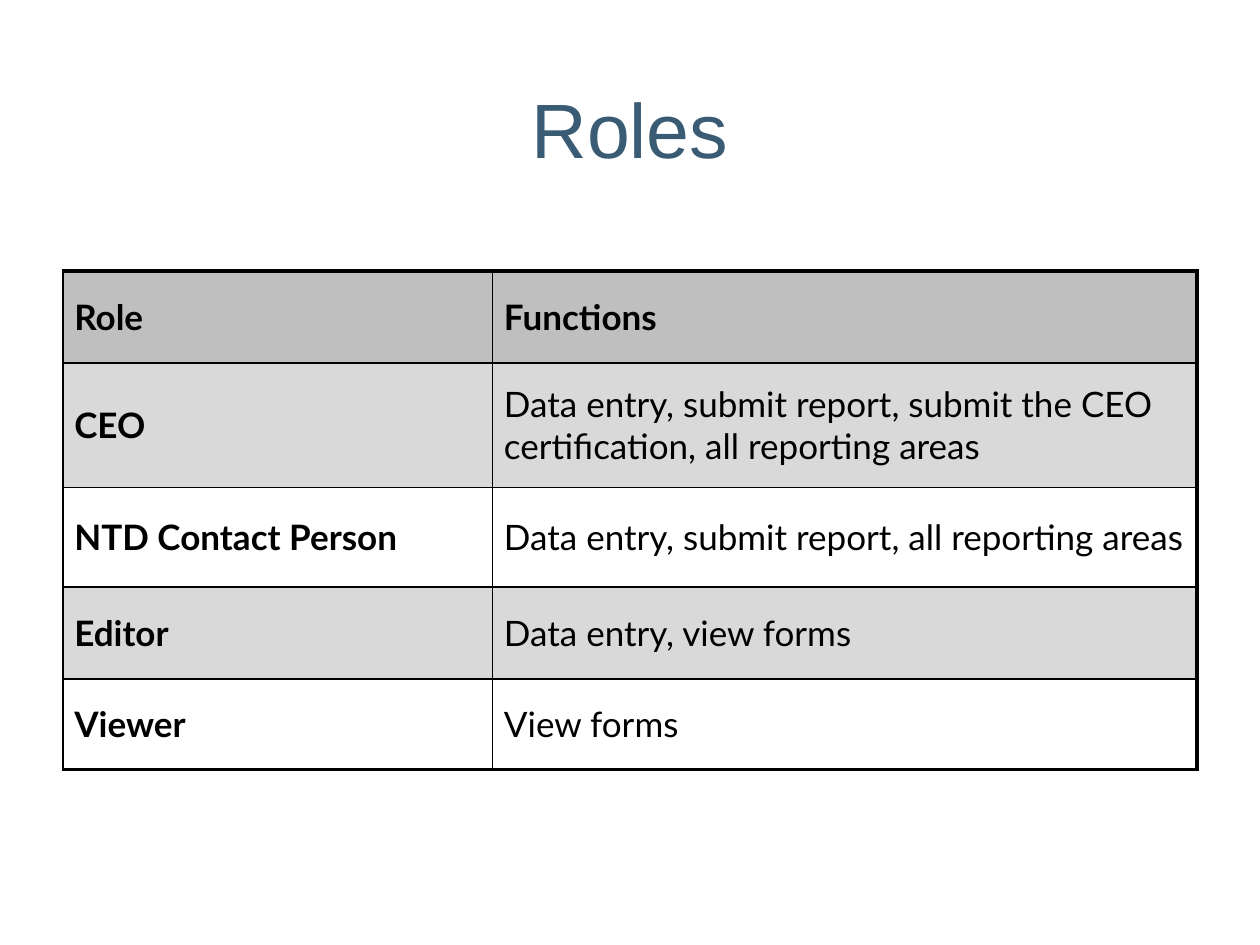
from pptx import Presentation
from pptx import util as u
from pptx.dml.color import RGBColor
from pptx.enum import text
from pptx.oxml import ns
from lxml import etree

TITLE_BLUE = RGBColor(0x39, 0x5B, 0x74)
BLACK = RGBColor(0, 0, 0)
WHITE = RGBColor(0xFF, 0xFF, 0xFF)
HEADER_GREY = RGBColor(0xBF, 0xBF, 0xBF)
BAND_GREY = RGBColor(0xD9, 0xD9, 0xD9)

WIDTH, HEIGHT = u.Inches(10), u.Inches(7.5)
MARGIN = 0.05
COLUMNS = [3.41, 5.59]
ROW_HEIGHTS = [0.73, 0.99, 0.79, 0.73, 0.72]
ROWS = [
    ("Role", "Functions"),
    ("CEO", "Data entry, submit report, submit the CEO certification, all reporting areas"),
    ("NTD Contact Person", "Data entry, submit report, all reporting areas"),
    ("Editor", "Data entry, view forms"),
    ("Viewer", "View forms"),
]
THIN, THICK = u.Pt(1), u.Pt(2.25)


def set_font(font, color, **values):
    """Apply a colour and a dict of format values to a font."""
    font.color.rgb = color
    for name, value in values.items():
        setattr(font, name, value)


def add_title(slide, words):
    """Add the centred slide title."""
    shape = slide.shapes.add_textbox(
        int(WIDTH * MARGIN), u.Inches(0.48), int(WIDTH * (1 - 2 * MARGIN)), u.Inches(1.07))
    shape.text_frame.word_wrap = True
    shape.text_frame.vertical_anchor = text.MSO_ANCHOR.MIDDLE
    paragraph = shape.text_frame.paragraphs[0]
    paragraph.text = words
    paragraph.alignment = text.PP_ALIGN.CENTER
    set_font(paragraph.font, TITLE_BLUE, name="Arial", size=u.Pt(44))


def add_borders(cell, widths):
    """Draw solid borders on a cell from a dict of side to width."""
    properties = cell._tc.get_or_add_tcPr()
    for side, width in widths.items():
        line = etree.SubElement(properties, ns.qn(f"a:ln{side}"), w=str(width))
        fill = etree.SubElement(line, ns.qn("a:solidFill"))
        etree.SubElement(fill, ns.qn("a:srgbClr"), val=str(BLACK))


def fill_cell(cell, words, color, bold):
    """Set the text, fill and format of a cell."""
    cell.fill.solid()
    cell.fill.fore_color.rgb = color
    cell.vertical_anchor = text.MSO_ANCHOR.MIDDLE
    cell.margin_left = cell.margin_right = u.Inches(0.09)
    cell.margin_top = cell.margin_bottom = u.Inches(0.05)
    paragraph = cell.text_frame.paragraphs[0]
    paragraph.text = words
    set_font(paragraph.font, BLACK, name="Lato", size=u.Pt(20), bold=bold)


def add_roles_table(slide):
    """Add the banded table of roles and their functions."""
    table = slide.shapes.add_table(
        len(ROWS), len(COLUMNS), int(WIDTH * MARGIN), u.Inches(2.15),
        u.Inches(sum(COLUMNS)), u.Inches(sum(ROW_HEIGHTS))).table
    table.horz_banding = False
    for column, width in zip(table.columns, COLUMNS):
        column.width = u.Inches(width)
    last_row, last_column = len(ROWS) - 1, len(COLUMNS) - 1
    for i, (row, height) in enumerate(zip(table.rows, ROW_HEIGHTS)):
        row.height = u.Inches(height)
        color = HEADER_GREY if i == 0 else BAND_GREY if i % 2 else WHITE
        for j, cell in enumerate(row.cells):
            add_borders(cell, {
                "L": THIN,
                "R": THICK if j == last_column else THIN,
                "T": THICK if i == 0 else THIN,
                "B": THICK if i == last_row else THIN,
            })
            fill_cell(cell, ROWS[i][j], color, bold=i == 0 or j == 0)


def main():
    """Build and save the roles slide."""
    presentation = Presentation()
    presentation.slide_width, presentation.slide_height = WIDTH, HEIGHT
    slide = presentation.slides.add_slide(presentation.slide_layouts[6])
    add_title(slide, "Roles")
    add_roles_table(slide)
    presentation.save("out.pptx")


if __name__ == "__main__":
    main()
